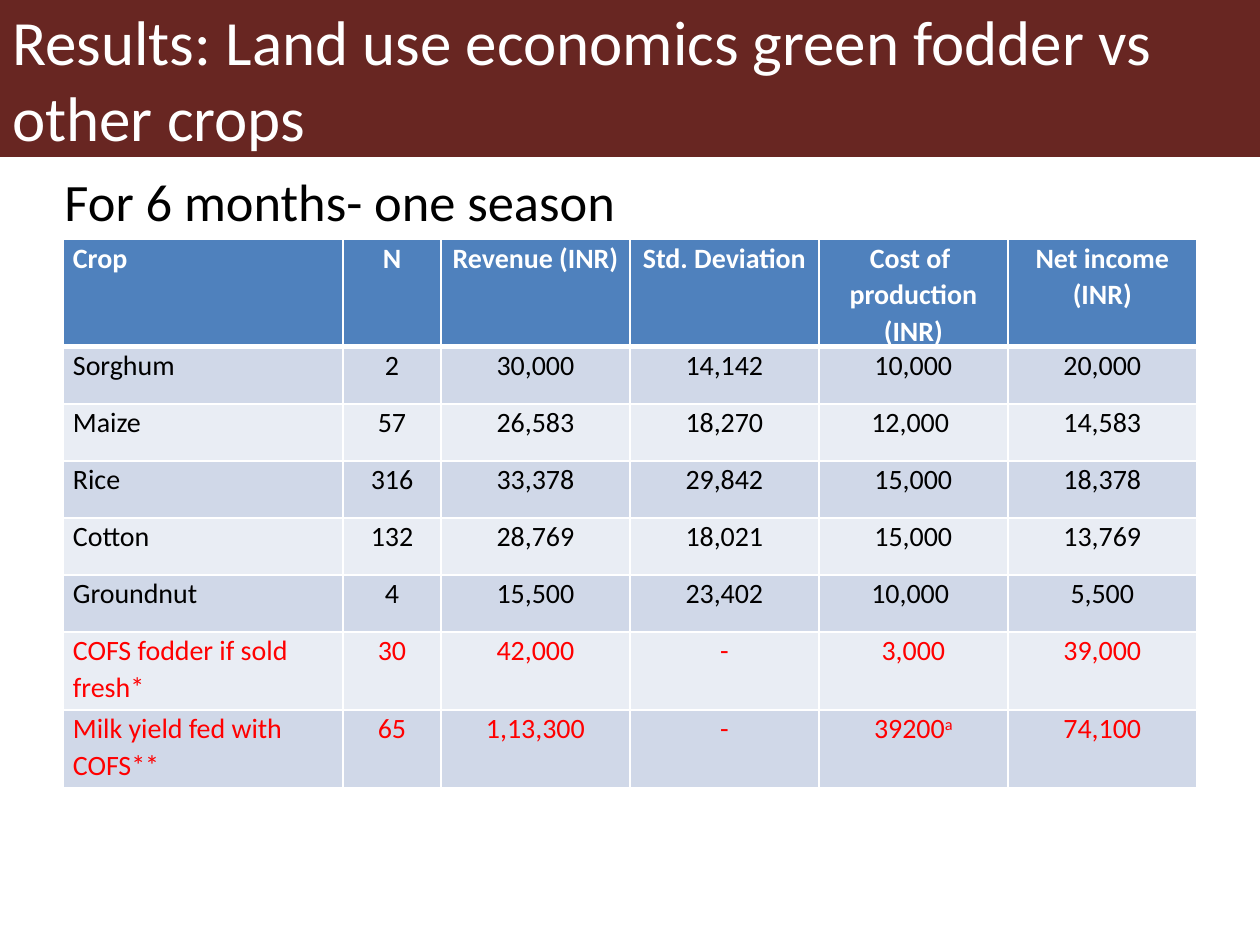
from lxml import etree
from pptx import Presentation
from pptx.dml.color import RGBColor
from pptx.enum import shapes, text
from pptx.oxml.ns import qn
from pptx import util as u

EMU_PER_PX = 914400 // 126
LEFT, CENTER = text.PP_ALIGN.LEFT, text.PP_ALIGN.CENTER
TOP, MIDDLE = text.MSO_ANCHOR.TOP, text.MSO_ANCHOR.MIDDLE


def px(value):
    return u.Emu(value * EMU_PER_PX)


def color(hex_string):
    return RGBColor.from_string(hex_string)


def write(frame, content, size=16, ink="000000", bold=False, align=LEFT,
          spacing=None, after=None, superscript=None):
    """Fill the first paragraph; a newline in content is a line break."""
    paragraph = frame.paragraphs[0]
    paragraph.alignment = align
    if spacing is not None:
        paragraph.line_spacing = spacing
    if after is not None:
        paragraph.space_after = u.Pt(after)
    for index, line in enumerate(content.split("\n")):
        if index:
            paragraph.add_line_break()
        paragraph.add_run().text = line
    if superscript:
        raised = paragraph.add_run()
        raised.text = superscript
        raised.font._element.set("baseline", "30000")
    for run in paragraph.runs:
        run.font.name = "Calibri"
        run.font.size = u.Pt(size)
        run.font.bold = bold
        run.font.color.rgb = color(ink)


class SlideBuilder:
    BAND, HEADER, STRIPES = "682622", "4F81BD", ("D0D8E8", "E9EDF4")
    WHITE, BLACK, HIGHLIGHT = "FFFFFF", "000000", "FF0000"

    def __init__(self, slide):
        self.slide = slide

    def bar(self, left, top, width, height):
        bar = self.slide.shapes.add_shape(
            shapes.MSO_SHAPE.RECTANGLE, *map(px, (left, top, width, height)))
        bar.shadow.inherit = False
        bar.fill.solid()
        bar.fill.fore_color.rgb = color(self.BAND)
        bar.line.fill.background()

    def label(self, left, top, width, height, content, wrap=True, anchor=TOP, **style):
        box = self.slide.shapes.add_textbox(*map(px, (left, top, width, height)))
        box.text_frame.word_wrap = wrap
        box.text_frame.vertical_anchor = anchor
        write(box.text_frame, content, **style)

    def borders(self, cell, **widths):
        properties = cell._tc.get_or_add_tcPr()
        for side in "LRTB":
            line = etree.SubElement(properties, qn(f"a:ln{side}"),
                                    w=str(u.Pt(widths.get(side, 1))))
            fill = etree.SubElement(line, qn("a:solidFill"))
            etree.SubElement(fill, qn("a:srgbClr"), val=self.WHITE)

    def cell(self, cell, content, fill, **style):
        cell.margin_left = cell.margin_right = px(10)
        cell.margin_top = cell.margin_bottom = 0
        cell.fill.solid()
        cell.fill.fore_color.rgb = color(fill)
        content, _, note = content.partition("^")
        write(cell.text_frame, content, spacing=1.07, after=3, superscript=note, **style)

    def table(self, left, top, widths, heights, rows, highlighted):
        table = self.slide.shapes.add_table(
            len(rows), len(widths), px(left), px(top),
            px(sum(widths)), px(sum(heights))).table
        for column, width in zip(table.columns, widths):
            column.width = px(width)
        for r, (height, row) in enumerate(zip(heights, rows)):
            table.rows[r].height = px(height)
            fill = self.STRIPES[(r - 1) % 2] if r else self.HEADER
            ink = self.HIGHLIGHT if row[0] in highlighted else self.BLACK
            for c, content in enumerate(row):
                cell = table.cell(r, c)
                self.borders(cell, T=3 if r == 1 else 1, B=1 if r else 3)
                self.cell(cell, content, fill, ink=ink if r else self.WHITE,
                          bold=r == 0, align=CENTER if c else LEFT)


# "^" marks a superscript note
CROPS = [
    ("Crop", "N", "Revenue (INR)", "Std. Deviation",
     "Cost of \nproduction (INR)", "Net income (INR)"),
    ("Sorghum", "2", "30,000", "14,142", "10,000", "20,000"),
    ("Maize", "57", "26,583", "18,270", "12,000 ", "14,583"),
    ("Rice", "316", "33,378", "29,842", "15,000", "18,378"),
    ("Cotton", "132", "28,769", "18,021", "15,000", "13,769"),
    ("Groundnut", "4", "15,500", "23,402", "10,000 ", "5,500"),
    ("COFS fodder if sold fresh*", "30", "42,000", "-", "3,000", "39,000"),
    ("Milk yield fed with COFS**", "65", "1,13,300", "-", "39200^a", "74,100"),
]


def main():
    deck = Presentation()
    deck.slide_width, deck.slide_height = px(1260), px(945)
    builder = SlideBuilder(deck.slides.add_slide(deck.slide_layouts[6]))

    # Title band
    builder.bar(0, 0, 1260, 157)
    builder.label(0, 0, 1300, 157, "Results: Land use economics green fodder vs other crops",
                  anchor=MIDDLE, size=36, ink=builder.WHITE)

    # Crop economics table
    builder.table(63, 239, [280, 98] + [189] * 4, [78] + [57] * 5 + [78] * 2,
                  CROPS, highlighted=[row[0] for row in CROPS[-2:]])

    # Period covered
    builder.label(49, 170, 582, 69, "For 6 months- one season", wrap=False,
                  size=30, align=CENTER, spacing=u.Pt(32))

    deck.save("out.pptx")


if __name__ == "__main__":
    main()
